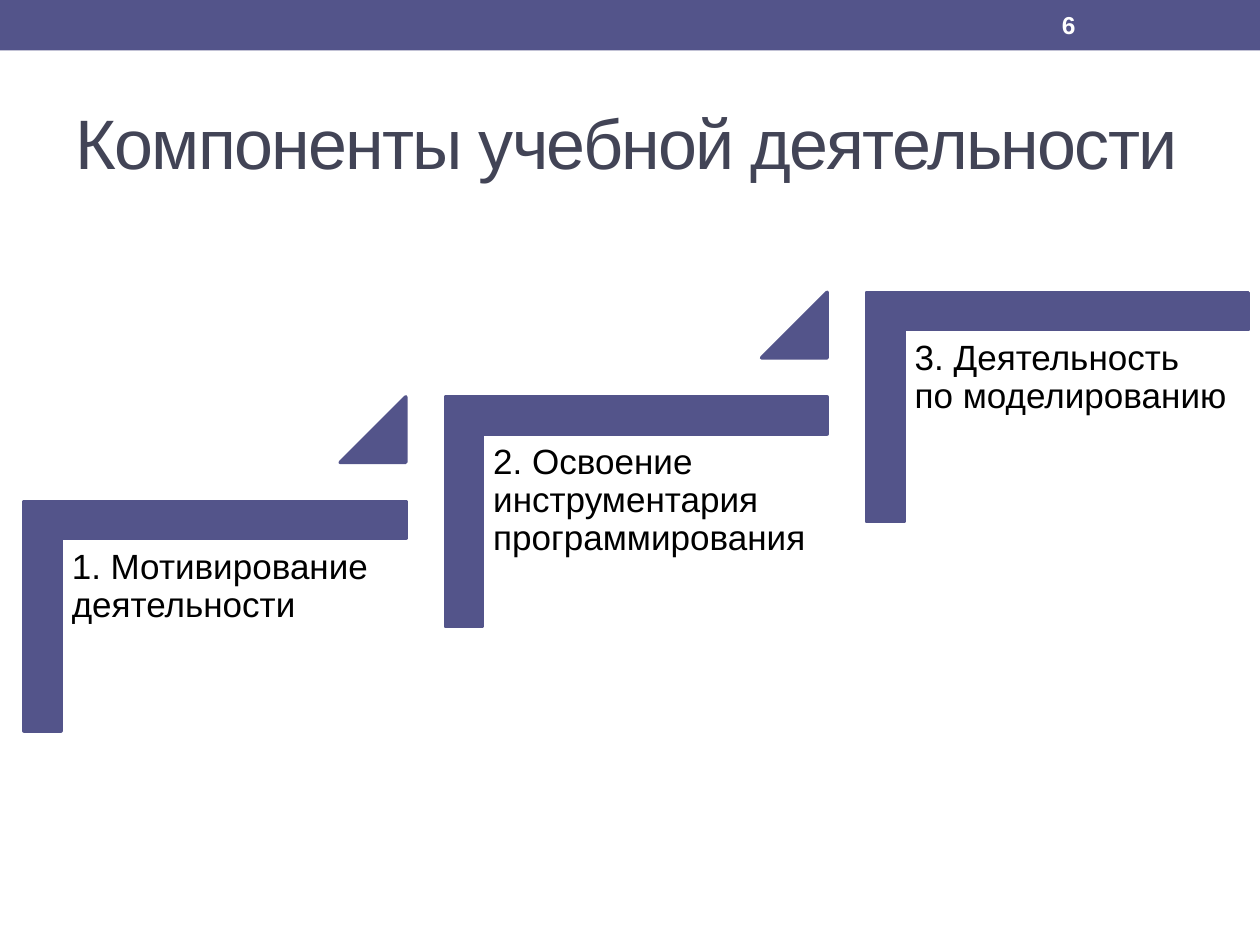
from pptx import Presentation
from pptx.dml.color import RGBColor
from pptx.enum.shapes import MSO_SHAPE
from pptx.enum.text import MSO_ANCHOR, PP_ALIGN
from pptx.util import Inches, Pt

RECTANGLE = MSO_SHAPE.RECTANGLE
CORNER = MSO_SHAPE.CORNER
TRIANGLE = MSO_SHAPE.ISOSCELES_TRIANGLE
TOP, MIDDLE = MSO_ANCHOR.TOP, MSO_ANCHOR.MIDDLE
LEFT = PP_ALIGN.LEFT

INDIGO = RGBColor(0x53, 0x54, 0x8A)
SLATE = RGBColor(0x42, 0x44, 0x56)
BLACK = RGBColor(0, 0, 0)
WHITE = RGBColor(255, 255, 255)
FONT = "Arial"
TITLE_ONLY = 5

STEPS = [
    "1. Мотивирование деятельности",
    "2. Освоение инструментария программирования",
    "3. Деятельность \vпо моделированию",
]
STEP_WIDTH, STEP_HEIGHT = 3.03, 1.82
STEP_RIGHT, STEP_UP = 3.345, 0.83
BAR_RATIO = 0.161


def style_text(frame, text, size, color, anchor, bold=False):
    frame.text = text
    frame.word_wrap = True
    frame.vertical_anchor = anchor
    paragraph = frame.paragraphs[0]
    paragraph.alignment = LEFT
    font = paragraph.font
    font.name, font.size, font.bold = FONT, Pt(size), bold
    font.color.rgb = color
    return paragraph


def add_solid(slide, preset, left, top, width, height, outlined=True):
    solid = slide.shapes.add_shape(
        preset, Inches(left), Inches(top), Inches(width), Inches(height))
    solid.shadow.inherit = False
    solid.fill.solid()
    solid.fill.fore_color.rgb = INDIGO
    if outlined:
        solid.line.color.rgb = INDIGO
        solid.line.width = Pt(2.08)
    else:
        solid.line.fill.background()
    return solid


def add_header(slide, left, top, width, height):
    """Coloured band with the page number near its right end."""
    add_solid(slide, RECTANGLE, left, top, width, height, outlined=False)
    number = slide.shapes.add_textbox(
        Inches(left + width - 1.67), Inches(top + 0.02),
        Inches(1.17), Inches(height - 0.04))
    style_text(number.text_frame, "6", 14, WHITE, MIDDLE, bold=True)


def add_title(slide, left, top, width, height):
    title = slide.shapes.title
    title.left, title.top = Inches(left), Inches(top)
    title.width, title.height = Inches(width), Inches(height)
    heading = style_text(title.text_frame, "Компоненты учебной деятельности",
                         40, SLATE, MIDDLE)
    # Letter spacing in hundredths of a point
    heading.runs[0].font._element.set("spc", "-100")


def add_step(slide, text, left, top, width, height, leads_on):
    """One stair, with a triangle above it when another stair follows."""
    # The corner turns by 90 degrees about its centre, so its sides swap.
    shift = (width - height) / 2
    corner = add_solid(slide, CORNER, left + shift, top - shift, height, width)
    corner.rotation = 90
    corner.adjustments[0] = corner.adjustments[1] = BAR_RATIO

    label = slide.shapes.add_textbox(
        Inches(left + 0.3), Inches(top + 0.3), Inches(width - 0.3), Inches(2.4))
    frame = label.text_frame
    frame.margin_left = frame.margin_right = Inches(0.08)
    frame.margin_top = frame.margin_bottom = Inches(0.08)
    style_text(frame, text, 20, BLACK, TOP).line_spacing = 0.9

    if leads_on:
        side = 0.52
        triangle = add_solid(slide, TRIANGLE, left + width - side,
                             top - STEP_UP, side, side)
        triangle.adjustments[0] = 1


def add_staircase(slide, left, top):
    """Stairs rising to the right from the first one at left, top."""
    for index, text in enumerate(STEPS):
        add_step(slide, text, left + index * STEP_RIGHT, top - index * STEP_UP,
                 STEP_WIDTH, STEP_HEIGHT, leads_on=index < len(STEPS) - 1)


def main():
    deck = Presentation()
    deck.slide_width, deck.slide_height = Inches(10), Inches(7.5)
    slide = deck.slides.add_slide(deck.slide_layouts[TITLE_ONLY])
    add_header(slide, 0, 0, 10, 0.4)
    add_title(slide, 0.5, 0.58, 9, 1.08)
    add_staircase(slide, 0.19, 3.98)
    deck.save("out.pptx")


if __name__ == "__main__":
    main()
